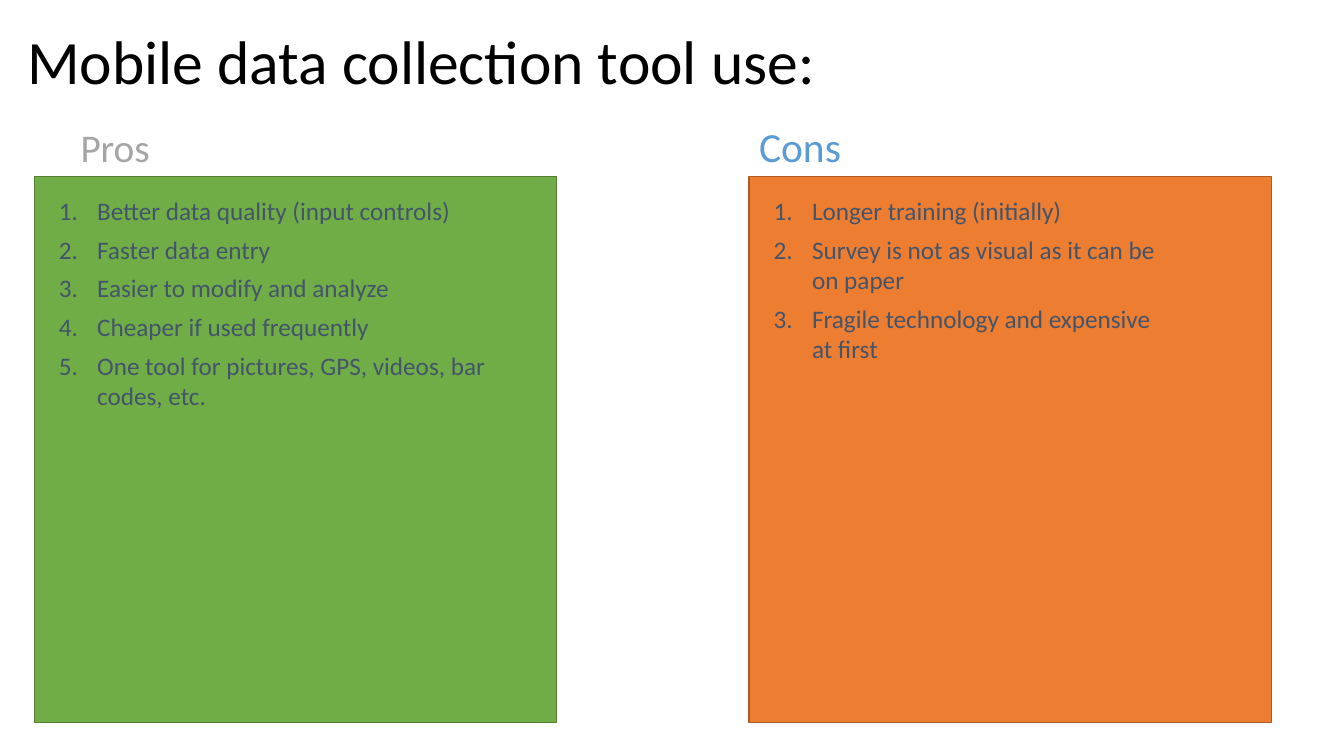
from dataclasses import dataclass

from lxml.etree import SubElement
from pptx import Presentation
from pptx.dml.color import RGBColor
from pptx.enum.shapes import MSO_SHAPE
from pptx.enum.text import MSO_ANCHOR, MSO_AUTO_SIZE
from pptx.oxml.ns import qn
from pptx.slide import Slide
from pptx.util import Inches, Pt

BLACK = RGBColor(0x00, 0x00, 0x00)
GRAY = RGBColor(0xA5, 0xA5, 0xA5)
BLUE = RGBColor(0x5B, 0x9B, 0xD5)
SLATE = RGBColor(0x44, 0x54, 0x6A)
GREEN = RGBColor(0x70, 0xAD, 0x47)
DARK_GREEN = RGBColor(0x53, 0x80, 0x35)
ORANGE = RGBColor(0xED, 0x7D, 0x31)
DARK_ORANGE = RGBColor(0xAF, 0x5C, 0x24)

FONT = "Calibri"
SLIDE_W, SLIDE_H = Inches(13.33), Inches(7.5)
INDENT = Inches(0.38)
PANEL_TOP, PANEL_W, PANEL_H = 23.33, 38.86, 72.27
LIST_DX, LIST_TOP = 1.09, 25.2


@dataclass(frozen=True)
class Area:
    """A rectangle in percent of the slide's width and height."""
    left: float
    top: float
    width: float
    height: float

    def emu(self) -> tuple[int, int, int, int]:
        return (int(SLIDE_W * self.left / 100), int(SLIDE_H * self.top / 100),
                int(SLIDE_W * self.width / 100), int(SLIDE_H * self.height / 100))


@dataclass(frozen=True)
class Side:
    heading: str
    heading_area: Area
    heading_size: float
    heading_spacing: float
    heading_color: RGBColor
    left: float
    fill: RGBColor
    line: RGBColor
    list_w: float
    list_h: float
    points: tuple[str, ...]


SIDES = (
    Side("Pros", Area(5.25, 15.6, 27.31, 8.4), 28, 0.9, GRAY,
         2.55, GREEN, DARK_GREEN, 33.68, 40.4,
         ("Better data quality (input controls)",
          "Faster data entry",
          "Easier to modify and analyze",
          "Cheaper if used frequently",
          "One tool for pictures, GPS, videos, bar codes, etc.")),
    Side("Cons", Area(55.74, 16.93, 35.56, 6.4), 29.6, 0.7, BLUE,
         55.74, ORANGE, DARK_ORANGE, 30.76, 28.93,
         ("Longer training (initially)",
          "Survey is not as visual as it can be on paper",
          "Fragile technology and expensive at first")),
)


def add_text(s: Slide, area: Area, *lines: str, size: float, color: RGBColor,
             anchor: MSO_ANCHOR = MSO_ANCHOR.TOP, spacing: float = 1.0,
             before: float = 0, after: float = 0, numbered: bool = False) -> None:
    tf = s.shapes.add_textbox(*area.emu()).text_frame
    tf.word_wrap = True
    tf.vertical_anchor = anchor
    if numbered:
        tf.auto_size = MSO_AUTO_SIZE.SHAPE_TO_FIT_TEXT
    for i, line in enumerate(lines):
        p = tf.add_paragraph() if i else tf.paragraphs[0]
        p.line_spacing = spacing
        p.space_before, p.space_after = Pt(before), Pt(after)
        if numbered:
            pPr = p._p.get_or_add_pPr()
            pPr.set("marL", str(INDENT))
            pPr.set("indent", str(-INDENT))
            SubElement(pPr, qn("a:buFont"), typeface="+mj-lt")
            SubElement(pPr, qn("a:buAutoNum"), type="arabicPeriod")
        r = p.add_run()
        r.text = line
        r.font.name, r.font.size = FONT, Pt(size)
        r.font.color.rgb = color


def add_panel(s: Slide, area: Area, fill: RGBColor, line: RGBColor) -> None:
    sp = s.shapes.add_shape(MSO_SHAPE.RECTANGLE, *area.emu())
    sp.shadow.inherit = False
    sp.fill.solid()
    sp.fill.fore_color.rgb = fill
    sp.line.color.rgb = line
    sp.line.width = Pt(1)


def add_side(s: Slide, side: Side) -> None:
    """Draws a heading above a panel that holds a numbered list."""
    add_text(s, side.heading_area, side.heading, size=side.heading_size,
             color=side.heading_color, anchor=MSO_ANCHOR.MIDDLE,
             spacing=side.heading_spacing, before=10)
    add_panel(s, Area(side.left, PANEL_TOP, PANEL_W, PANEL_H), side.fill, side.line)
    add_text(s, Area(side.left + LIST_DX, LIST_TOP, side.list_w, side.list_h),
             *side.points, size=18, color=SLATE, after=6, numbered=True)


def main() -> None:
    prs = Presentation()
    prs.slide_width, prs.slide_height = SLIDE_W, SLIDE_H
    s = prs.slides.add_slide(prs.slide_layouts[6])
    add_text(s, Area(1.28, 3.47, 92.27, 12.93), "Mobile data collection tool use:",
             size=44, color=BLACK, spacing=0.9)
    for side in SIDES:
        add_side(s, side)
    prs.save("out.pptx")


if __name__ == "__main__":
    main()
